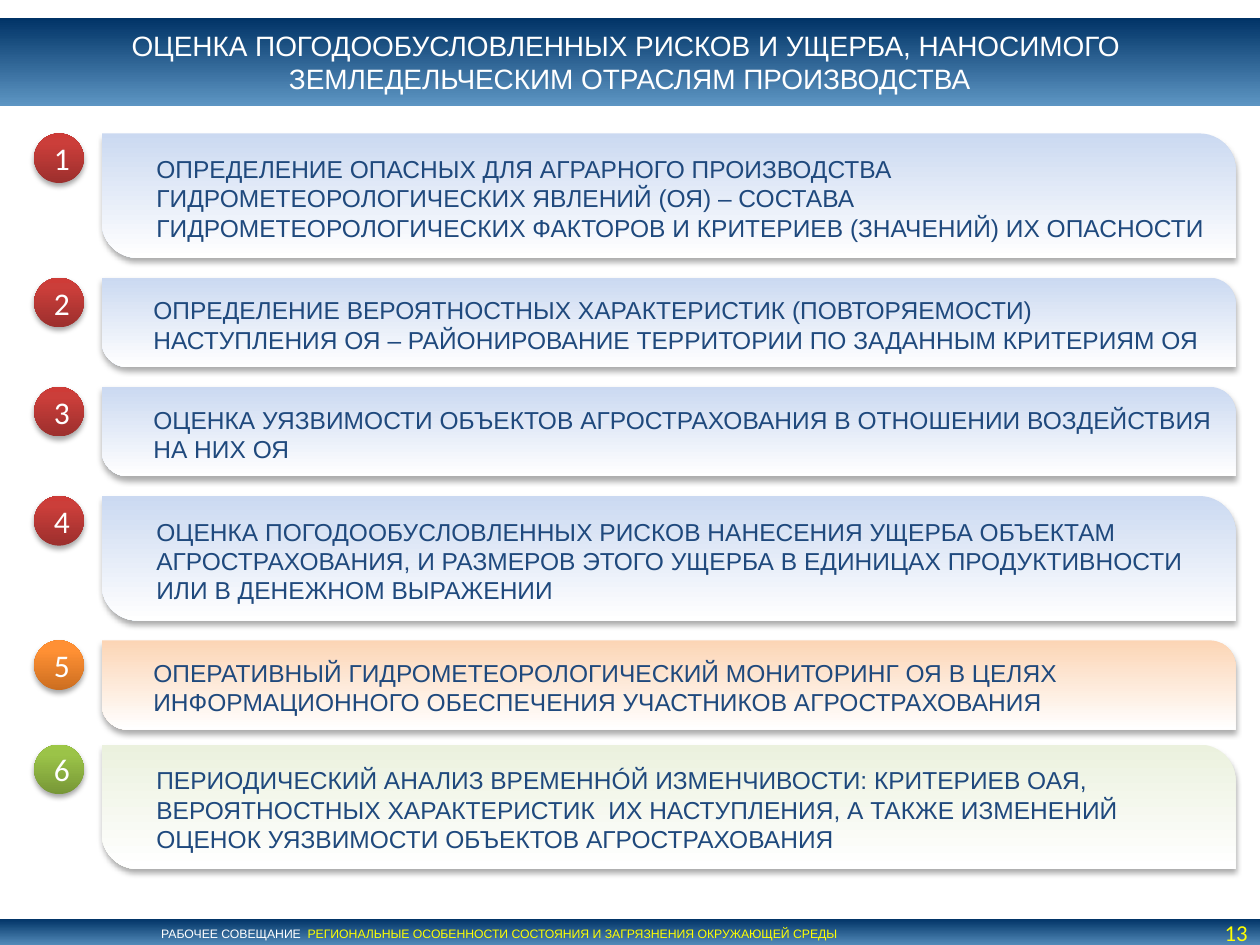
from copy import deepcopy

from lxml.etree import SubElement
from pptx import Presentation
from pptx.dml.color import RGBColor
from pptx.enum.shapes import MSO_SHAPE
from pptx.enum.text import MSO_ANCHOR, PP_ALIGN
from pptx.oxml.ns import qn
from pptx.util import Cm, Pt

NAVY_BAND = [(0, "003366"), (1, "5D95C3")]
RED = [(0, "9C2F2D"), (0.8, "CB3E3A"), (1, "CE3B37")]
ORANGE = [(0, "CC6E20"), (0.8, "FF9034"), (1, "FF9136")]
GREEN = [(0, "779737"), (0.8, "9BC348"), (1, "9DC746")]
WHITE, YELLOW, TEXT_BLUE = "FFFFFF", "FFFF00", "1F497D"
TOP, GAP, LAST_GAP = 2.69, 0.4, 0.3
TALL, LOW = 2.51, 1.8

STEPS = [
    ("ОПРЕДЕЛЕНИЕ ОПАСНЫХ ДЛЯ АГРАРНОГО ПРОИЗВОДСТВА ГИДРОМЕТЕОРОЛОГИЧЕСКИХ "
     "ЯВЛЕНИЙ (ОЯ) – СОСТАВА ГИДРОМЕТЕОРОЛОГИЧЕСКИХ ФАКТОРОВ И КРИТЕРИЕВ "
     "(ЗНАЧЕНИЙ) ИХ ОПАСНОСТИ", TALL, GAP, "CBD9F1", RED),
    ("ОПРЕДЕЛЕНИЕ ВЕРОЯТНОСТНЫХ ХАРАКТЕРИСТИК (ПОВТОРЯЕМОСТИ) НАСТУПЛЕНИЯ ОЯ – "
     "РАЙОНИРОВАНИЕ ТЕРРИТОРИИ ПО ЗАДАННЫМ КРИТЕРИЯМ ОЯ", LOW, GAP, "CBD9F1", RED),
    ("ОЦЕНКА УЯЗВИМОСТИ ОБЪЕКТОВ АГРОСТРАХОВАНИЯ В ОТНОШЕНИИ ВОЗДЕЙСТВИЯ "
     "НА НИХ ОЯ", LOW, GAP, "CBD9F1", RED),
    ("ОЦЕНКА ПОГОДООБУСЛОВЛЕННЫХ РИСКОВ НАНЕСЕНИЯ УЩЕРБА ОБЪЕКТАМ "
     "АГРОСТРАХОВАНИЯ, И РАЗМЕРОВ ЭТОГО УЩЕРБА В ЕДИНИЦАХ ПРОДУКТИВНОСТИ "
     "ИЛИ В ДЕНЕЖНОМ ВЫРАЖЕНИИ", TALL, GAP, "CBD9F1", RED),
    ("ОПЕРАТИВНЫЙ ГИДРОМЕТЕОРОЛОГИЧЕСКИЙ МОНИТОРИНГ ОЯ В ЦЕЛЯХ "
     "ИНФОРМАЦИОННОГО ОБЕСПЕЧЕНИЯ УЧАСТНИКОВ АГРОСТРАХОВАНИЯ",
     LOW, LAST_GAP, "FCD5B5", ORANGE),
    ("ПЕРИОДИЧЕСКИЙ АНАЛИЗ ВРЕМЕННÓЙ ИЗМЕНЧИВОСТИ: КРИТЕРИЕВ ОАЯ, "
     "ВЕРОЯТНОСТНЫХ ХАРАКТЕРИСТИК  ИХ НАСТУПЛЕНИЯ, А ТАКЖЕ ИЗМЕНЕНИЙ ОЦЕНОК "
     "УЯЗВИМОСТИ ОБЪЕКТОВ АГРОСТРАХОВАНИЯ", TALL, GAP, "EBF1DE", GREEN),
]


def rgb(color):
    return RGBColor.from_string(color)


def set_gradient(sp, stops, angle):
    sp.fill.gradient()
    sp.fill.gradient_angle = angle
    gs_list = sp._element.spPr.find(".//" + qn("a:gsLst"))
    for _ in stops[2:]:
        gs_list.append(deepcopy(gs_list[0]))
    for stop, (position, color) in zip(sp.fill.gradient_stops, stops):
        stop.position = position
        stop.color.rgb = rgb(color)


def set_shadow(sp, opacity, blur, distance):
    effects = sp._element.spPr.find(qn("a:effectLst"))
    shadow = SubElement(effects, qn("a:outerShdw"), blurRad=str(Pt(blur)),
                        dist=str(Pt(distance)), dir="5400000", rotWithShape="0")
    color = SubElement(shadow, qn("a:srgbClr"), val="000000")
    SubElement(color, qn("a:alpha"), val=str(opacity * 1000))


def add_panel(s, kind, box, stops, angle=270):
    sp = s.shapes.add_shape(kind, *map(Cm, box))
    sp.shadow.inherit = False
    sp.line.fill.background()
    set_gradient(sp, stops, angle)
    return sp


def set_frame(sp, left, top, right, bottom):
    tf = sp.text_frame
    tf.word_wrap = True
    tf.vertical_anchor = MSO_ANCHOR.MIDDLE
    tf.margin_left, tf.margin_top = Cm(left), Cm(top)
    tf.margin_right, tf.margin_bottom = Cm(right), Cm(bottom)
    return tf


def set_paragraph(p, runs, size, font="Arial", align=PP_ALIGN.LEFT, indent=0):
    p.alignment = align
    if indent:
        p._p.get_or_add_pPr().set("marL", str(Cm(indent)))
    for text, color in runs:
        r = p.add_run()
        r.text = text
        r.font.size = Pt(size)
        r.font.name = font
        r.font.color.rgb = rgb(color)


def add_footer(s):
    sp = add_panel(s, MSO_SHAPE.RECTANGLE, (0, 18.52, 25.4, 0.6), NAVY_BAND)
    tf = set_frame(sp, 0.25, 0.13, 0.25, 0.13)
    set_paragraph(tf.paragraphs[0], [
        ("РАБОЧЕЕ СОВЕЩАНИЕ  ", WHITE),
        ("РЕГИОНАЛЬНЫЕ ОСОБЕННОСТИ СОСТОЯНИЯ И ЗАГРЯЗНЕНИЯ ОКРУЖАЮЩЕЙ СРЕДЫ", YELLOW),
    ], 7, indent=3)


def add_title(s):
    sp = add_panel(s, MSO_SHAPE.RECTANGLE, (0, 0.36, 25.4, 1.77), NAVY_BAND)
    tf = set_frame(sp, 0.5, 0.2, 0.5, 0.2)
    first, second = tf.paragraphs[0], tf.add_paragraph()
    set_paragraph(first, [("ОЦЕНКА ПОГОДООБУСЛОВЛЕННЫХ РИСКОВ И УЩЕРБА, НАНОСИМОГО ", WHITE)],
                  16, align=PP_ALIGN.CENTER)
    set_paragraph(second, [("ЗЕМЛЕДЕЛЬЧЕСКИМ ОТРАСЛЯМ ПРОИЗВОДСТВА", WHITE)],
                  16, align=PP_ALIGN.CENTER)


def add_step(s, text, top, height, tint):
    sp = add_panel(s, MSO_SHAPE.ROUND_2_DIAG_RECTANGLE, (2.05, top, 22.86, height),
                   [(0, tint), (1, WHITE)])
    sp.adjustments[0], sp.adjustments[1] = 0, 0.29
    set_shadow(sp, 32, 3.5, 2.2)
    tf = set_frame(sp, 0.4, 0.2, 0.1, 0.1)
    set_paragraph(tf.paragraphs[0], [(text, TEXT_BLUE)], 14, indent=0.49)


def add_badge(s, number, top, stops):
    sp = add_panel(s, MSO_SHAPE.OVAL, (0.69, top, 1, 1), stops, angle=90)
    set_shadow(sp, 35, 3.1, 1.8)
    tf = set_frame(sp, 0.25, 0.1, 0.25, 0.1)
    set_paragraph(tf.paragraphs[0], [(str(number), WHITE)], 18, "Calibri", PP_ALIGN.CENTER)


def add_page_number(s):
    sp = s.shapes.add_textbox(Cm(23.4), Cm(18.52), Cm(2), Cm(0.56))
    tf = set_frame(sp, 0.25, 0, 0.25, 0)
    set_paragraph(tf.paragraphs[0], [("13", YELLOW)], 13, "Calibri", PP_ALIGN.RIGHT)


def main():
    prs = Presentation()
    prs.slide_width, prs.slide_height = Cm(25.4), Cm(19.05)
    s = prs.slides.add_slide(prs.slide_layouts[6])
    add_footer(s)
    add_title(s)
    top = TOP
    for number, (text, height, gap, tint, badge) in enumerate(STEPS, 1):
        add_step(s, text, top, height, tint)
        add_badge(s, number, top, badge)
        top += height + gap
    add_page_number(s)
    prs.save("out.pptx")


if __name__ == "__main__":
    main()
